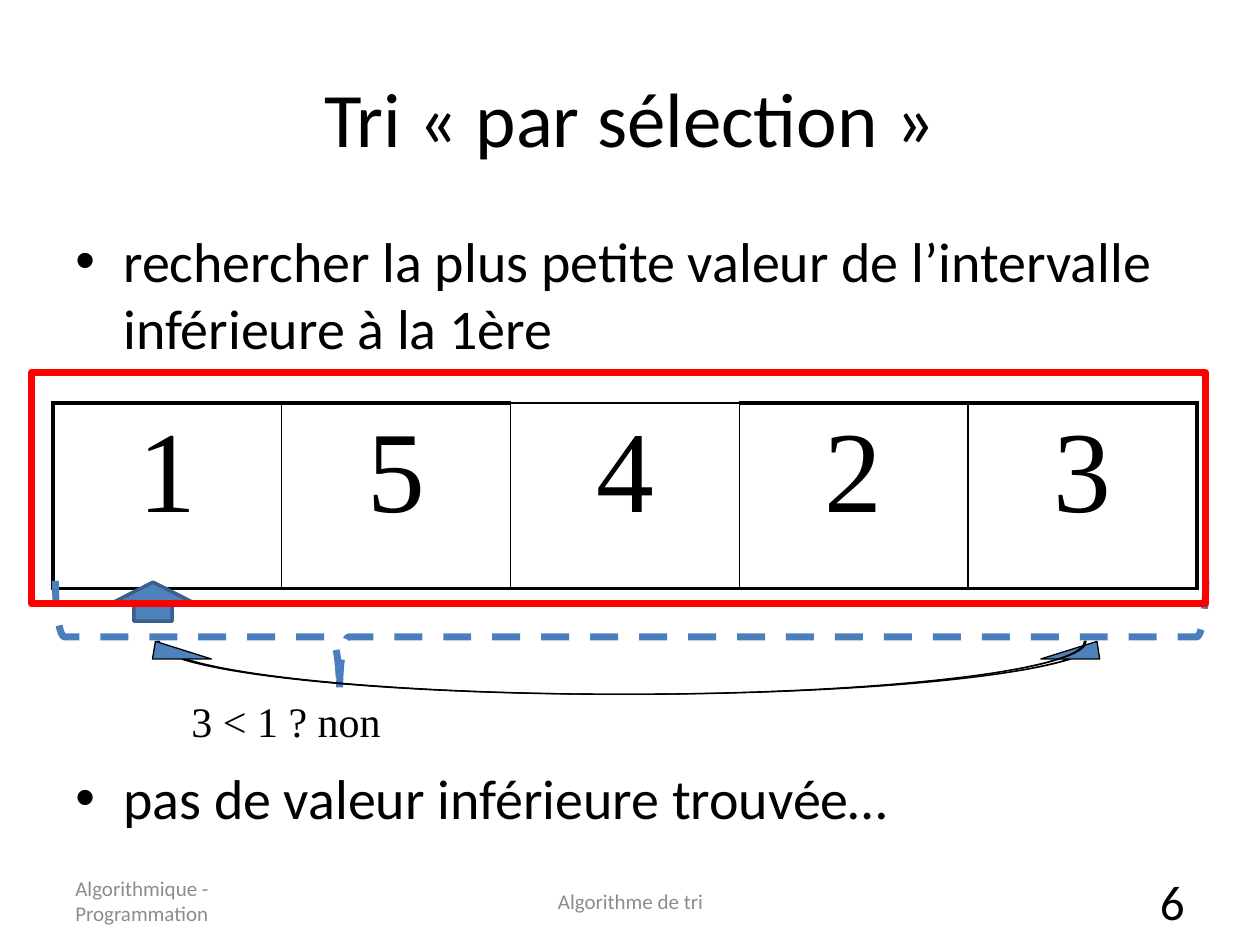
from dataclasses import dataclass, field
from typing import Optional

from lxml.etree import SubElement
from pptx import Presentation
from pptx.dml.color import RGBColor
from pptx.enum.dml import MSO_LINE
from pptx.enum.shapes import MSO_SHAPE
from pptx.enum.text import MSO_ANCHOR, PP_ALIGN
from pptx.oxml.ns import qn
from pptx.util import Emu, Inches, Pt

COLUMNS, ROWS = 100, 75
SLIDE_WIDTH, SLIDE_HEIGHT = Inches(10), Inches(7.5)
BLACK, GREY, RED = "000000", "8C8C8C", "FF0000"
BLUE, BRACE_BLUE, DARK_BLUE = "4F81BD", "4B7EBC", "3A5F8C"
VALUES = ["1", "5", "4", "2", "3"]
THIN, THICK = 1, 2.25


@dataclass
class Box:
    column: float
    row: float
    columns: float
    rows: float

    def lengths(self) -> list[Emu]:
        return [
            Emu(round(SLIDE_WIDTH * self.column / COLUMNS)),
            Emu(round(SLIDE_HEIGHT * self.row / ROWS)),
            Emu(round(SLIDE_WIDTH * self.columns / COLUMNS)),
            Emu(round(SLIDE_HEIGHT * self.rows / ROWS)),
        ]


@dataclass
class Caption:
    box: Box
    lines: list[str]
    size: float
    font: str = "Calibri"
    colour: str = BLACK
    align: PP_ALIGN = PP_ALIGN.LEFT
    gaps: list[float] = field(default_factory=lambda: [0])
    bulleted: bool = False
    frame: dict = field(default_factory=lambda: {"vertical_anchor": MSO_ANCHOR.MIDDLE})


@dataclass
class Mark:
    preset: MSO_SHAPE
    box: Box
    line: str
    width: float
    fill: Optional[str] = None
    adjustments: tuple = ()
    format: dict = field(default_factory=dict)
    dashed: bool = False
    mirrored: bool = False


def colour(code: str) -> RGBColor:
    return RGBColor.from_string(code)


def apply(target, values: dict) -> None:
    for name, value in values.items():
        setattr(target, name, value)


def write(paragraph, words: str, size: float, font: str, code: str,
          layout: dict) -> None:
    run = paragraph.add_run()
    run.text = words
    apply(run.font, {"size": Pt(size), "name": font})
    run.font.color.rgb = colour(code)
    apply(paragraph, layout)


def add_bullet(paragraph) -> None:
    properties = paragraph._p.get_or_add_pPr()
    indent = Inches(0.38)
    properties.set("marL", str(indent))
    properties.set("indent", str(-indent))
    SubElement(properties, qn("a:buFont")).set("typeface", "Arial")
    SubElement(properties, qn("a:buChar")).set("char", "•")


def draw_caption(slide, caption: Caption) -> None:
    frame = slide.shapes.add_textbox(*caption.box.lengths()).text_frame
    apply(frame, {"word_wrap": True, **caption.frame})
    for index, (words, gap) in enumerate(zip(caption.lines, caption.gaps)):
        paragraph = frame.add_paragraph() if index else frame.paragraphs[0]
        write(paragraph, words, caption.size, caption.font, caption.colour,
              {"alignment": caption.align, "space_before": Pt(gap)})
        if caption.bulleted:
            add_bullet(paragraph)


def draw_mark(slide, mark: Mark) -> None:
    shape = slide.shapes.add_shape(mark.preset, *mark.box.lengths())
    shape.shadow.inherit = False
    apply(shape, mark.format)
    for index, value in enumerate(mark.adjustments):
        shape.adjustments[index] = value
    if mark.fill:
        shape.fill.solid()
        shape.fill.fore_color.rgb = colour(mark.fill)
    else:
        shape.fill.background()
    shape.line.color.rgb = colour(mark.line)
    shape.line.width = Pt(mark.width)
    if mark.dashed:
        shape.line.dash_style = MSO_LINE.DASH
    if mark.mirrored:
        shape._element.spPr.xfrm.set("flipH", "1")


def draw_border(cell, side: str, width: float) -> None:
    edge = SubElement(cell._tc.get_or_add_tcPr(), qn(f"a:ln{side}"))
    edge.set("w", str(Pt(width)))
    SubElement(SubElement(edge, qn("a:solidFill")), qn("a:srgbClr")).set("val", BLACK)


def draw_values(slide, box: Box) -> None:
    table = slide.shapes.add_table(1, len(VALUES), *box.lengths()).table
    apply(table, {"first_row": False, "horz_banding": False})
    last = len(VALUES) - 1
    for index, value in enumerate(VALUES):
        cell = table.cell(0, index)
        write(cell.text_frame.paragraphs[0], value, 66, "Times New Roman", BLACK,
              {"alignment": PP_ALIGN.CENTER, "space_before": Pt(13.2)})
        borders = {
            "L": THIN if index else THICK,
            "R": THIN if index < last else THICK,
            "T": THIN if index == last // 2 else THICK,
            "B": THICK,
        }
        for side, width in borders.items():
            draw_border(cell, side, width)
        cell.fill.background()


def main() -> None:
    deck = Presentation()
    apply(deck, {"slide_width": SLIDE_WIDTH, "slide_height": SLIDE_HEIGHT})
    slide = deck.slides.add_slide(deck.slide_layouts[6])

    captions = [
        Caption(Box(5, 3, 90, 12.5), ["Tri « par sélection »"], 44,
                align=PP_ALIGN.CENTER),
        Caption(Box(5, 17.5, 90, 49.5),
                ["rechercher la plus petite valeur de l’intervalle inférieure à la 1ère",
                 "pas de valeur inférieure trouvée…"],
                32, gaps=[6.4, 230], bulleted=True,
                frame={"vertical_anchor": MSO_ANCHOR.TOP}),
        Caption(Box(5, 69.5, 23.3, 4), ["Algorithmique - Programmation"], 12,
                colour=GREY),
        Caption(Box(34.2, 69.5, 31.7, 4), ["Algorithme de tri"], 12,
                colour=GREY, align=PP_ALIGN.CENTER),
        Caption(Box(71.7, 69.5, 23.3, 4), ["6"], 28, align=PP_ALIGN.RIGHT),
        Caption(Box(14.2, 54.7, 17.2, 5), ["3 < 1 ? non"], 24, "Times New Roman",
                frame={"word_wrap": False}),
    ]
    swap = {"fill": BLUE, "line": BLACK, "width": 0.75,
            "adjustments": (0.032, 1.112, 0.333)}
    marks = [
        Mark(MSO_SHAPE.LEFT_BRACE, Box(45.6, 4.9, 8.9, 91.3), BRACE_BLUE, 4,
             adjustments=(0.083, 0.247), format={"rotation": 270}, dashed=True),
        Mark(MSO_SHAPE.CURVED_UP_ARROW, Box(12.5, 50.9, 76.9, 4.2), **swap),
        Mark(MSO_SHAPE.CURVED_UP_ARROW, Box(10, 50.9, 76.2, 4.2), mirrored=True, **swap),
        Mark(MSO_SHAPE.UP_ARROW, Box(9.1, 46.2, 6.1, 3.1), DARK_BLUE, 2, BLUE),
        Mark(MSO_SHAPE.RECTANGLE, Box(2.5, 29.6, 93.2, 18.3), RED, 4),
    ]
    for caption in captions:
        draw_caption(slide, caption)
    draw_values(slide, Box(4.2, 32, 90.8, 14.7))
    for mark in marks:
        draw_mark(slide, mark)
    deck.save("out.pptx")


if __name__ == "__main__":
    main()
